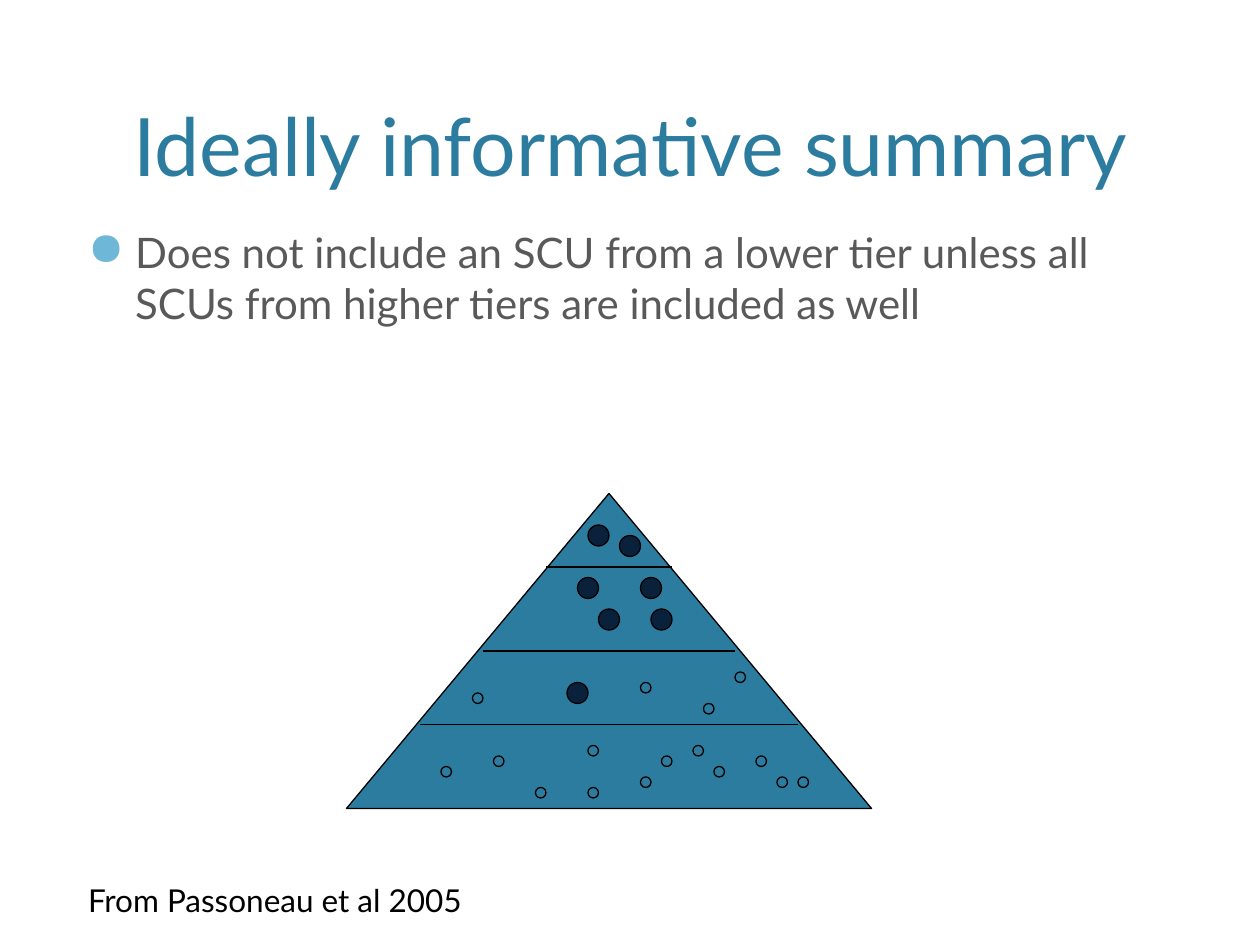
from typing import NamedTuple

from lxml.etree import SubElement
from pptx import Presentation
from pptx.dml.color import RGBColor
from pptx.enum.shapes import MSO_CONNECTOR, MSO_SHAPE
from pptx.enum.text import MSO_ANCHOR, MSO_AUTO_SIZE, PP_ALIGN
from pptx.oxml.ns import qn
from pptx.util import Pt

COLORS = {
    "teal": "2C7C9F",
    "navy": "09213B",
    "bullet": "6FB7D7",
    "body": "595959",
    "black": "000000",
}
FONT = "Lato"
LINE_WIDTH = 0.75
MARGIN, CONTENT_WIDTH = 43.2, 633.6
APEX_X, APEX_Y = 348, 282
PYRAMID_WIDTH, PYRAMID_HEIGHT = 300, 180
DIVIDER_HEIGHTS = (324, 372, 414)
DIVIDER_STEP = 36


class UnitGroup(NamedTuple):
    """Content units of one size and colour, by their top-left corners."""
    diameter: float
    color: str
    corners: tuple[tuple[float, float], ...]


UNIT_GROUPS = (
    UnitGroup(6, "teal", (
        (270, 396), (366, 390), (402, 402), (420, 384),
        (252, 438), (282, 432), (456, 444), (306, 450),
        (336, 426), (336, 450), (366, 444), (378, 432),
        (408, 438), (432, 432), (396, 426), (444, 444),
    )),
    UnitGroup(12, "navy", (
        (336, 300), (354, 306),
        (366, 330), (330, 330), (342, 348), (372, 348),
        (324, 390),
    )),
)


def rgb(name: str) -> RGBColor:
    return RGBColor.from_string(COLORS[name])


def add_span(para, text: str, size: float, color: str) -> None:
    span = para.add_run()
    span.text = text
    span.font.name = FONT
    span.font.size = Pt(size)
    span.font.color.rgb = rgb(color)


def place(shape, left: float, top: float, width: float, height: float) -> None:
    shape.left, shape.top = Pt(left), Pt(top)
    shape.width, shape.height = Pt(width), Pt(height)


def add_outlined(page, kind, left: float, top: float, width: float,
                 height: float, color: str) -> None:
    shape = page.shapes.add_shape(kind, Pt(left), Pt(top), Pt(width), Pt(height))
    shape.shadow.inherit = False
    shape.fill.solid()
    shape.fill.fore_color.rgb = rgb(color)
    shape.line.color.rgb = rgb("black")
    shape.line.width = Pt(LINE_WIDTH)


def add_divider(page, half_width: float, y: float) -> None:
    line = page.shapes.add_connector(
        MSO_CONNECTOR.STRAIGHT,
        Pt(APEX_X - half_width), Pt(y), Pt(APEX_X + half_width), Pt(y))
    line.line.color.rgb = rgb("black")
    line.line.width = Pt(LINE_WIDTH)
    SubElement(line._element.spPr, qn("a:effectLst"))


def add_bullet(para, indent: float) -> None:
    properties = para._p.get_or_add_pPr()
    properties.set("marL", str(Pt(indent)))
    properties.set("indent", str(-Pt(indent)))
    color = SubElement(properties, qn("a:buClr"))
    SubElement(color, qn("a:srgbClr"), val=COLORS["bullet"])
    SubElement(properties, qn("a:buSzPct"), val="110000")
    SubElement(properties, qn("a:buChar"), char="●")


def add_title(page) -> None:
    title = page.shapes.title
    place(title, MARGIN, 8.64, CONTENT_WIDTH, 105.12)
    frame = title.text_frame
    frame.auto_size = MSO_AUTO_SIZE.NONE
    frame.vertical_anchor = MSO_ANCHOR.BOTTOM
    para = frame.paragraphs[0]
    para.alignment = PP_ALIGN.CENTER
    add_span(para, "Ideally informative summary", 46, "teal")


def add_statement(page) -> None:
    box = page.shapes.add_textbox(Pt(MARGIN), Pt(126), Pt(CONTENT_WIDTH), Pt(342))
    box.text_frame.word_wrap = True
    para = box.text_frame.paragraphs[0]
    para.space_before = Pt(20)
    add_bullet(para, 27)
    add_span(para, "Does not include an SCU from a lower tier unless all "
                   "SCUs from higher tiers are included as well", 24, "body")


def add_pyramid(page) -> None:
    add_outlined(page, MSO_SHAPE.ISOSCELES_TRIANGLE, APEX_X - PYRAMID_WIDTH / 2,
                 APEX_Y, PYRAMID_WIDTH, PYRAMID_HEIGHT, "teal")
    for tier, y in enumerate(DIVIDER_HEIGHTS, start=1):
        add_divider(page, tier * DIVIDER_STEP, y)
    for group in UNIT_GROUPS:
        for left, top in group.corners:
            add_outlined(page, MSO_SHAPE.OVAL, left, top,
                         group.diameter, group.diameter, group.color)


def add_credit(page) -> None:
    box = page.shapes.add_textbox(Pt(MARGIN), Pt(499.7), Pt(250.6), Pt(28.8))
    box.text_frame.word_wrap = False
    box.text_frame.auto_size = MSO_AUTO_SIZE.SHAPE_TO_FIT_TEXT
    add_span(box.text_frame.paragraphs[0], "From Passoneau et al 2005", 18, "black")


def main() -> None:
    deck = Presentation()
    deck.slide_width, deck.slide_height = Pt(720), Pt(540)
    page = deck.slides.add_slide(deck.slide_layouts[5])
    add_title(page)
    add_statement(page)
    add_pyramid(page)
    add_credit(page)
    deck.save("out.pptx")


if __name__ == "__main__":
    main()
